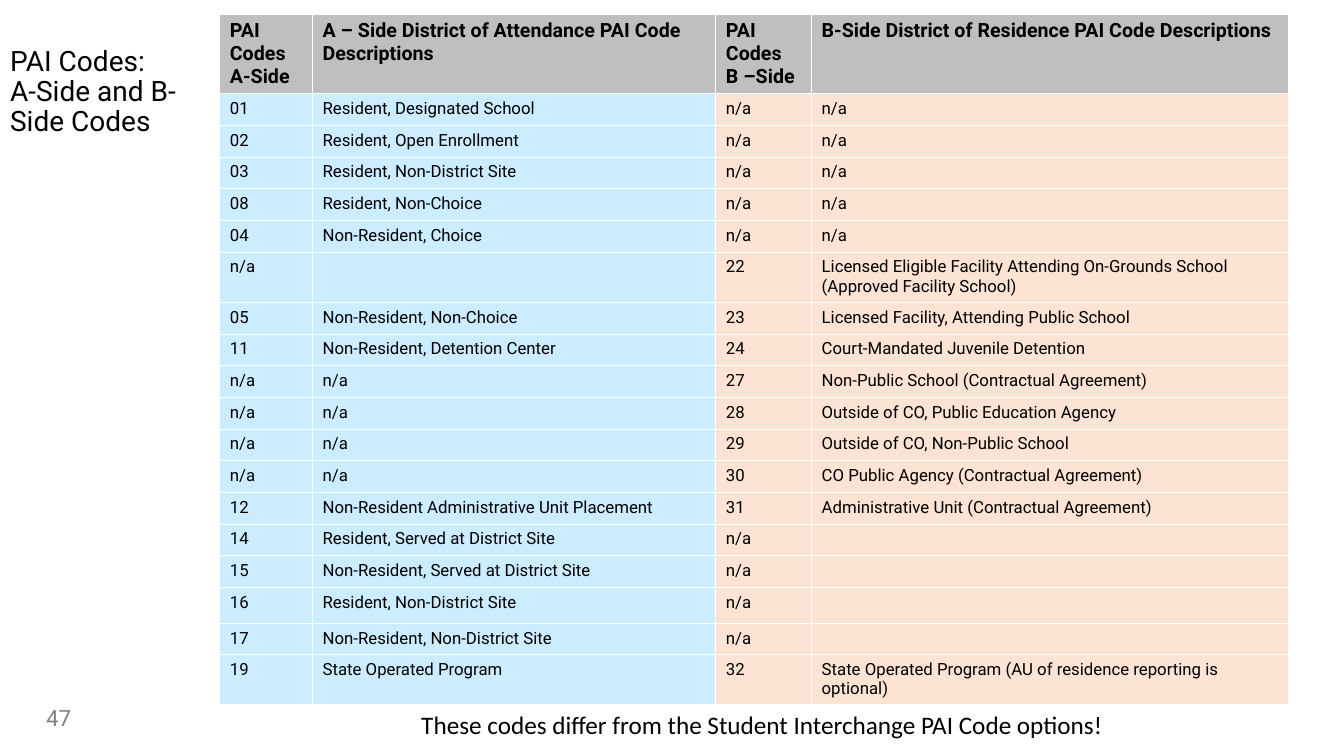
"""Build the slide comparing A-side and B-side PAI codes."""
from copy import deepcopy

from lxml import etree
from pptx import Presentation
from pptx.dml.color import RGBColor
from pptx.enum.text import MSO_ANCHOR, MSO_AUTO_SIZE, PP_ALIGN
from pptx.oxml.ns import qn
from pptx.util import Inches, Pt

LEFT = PP_ALIGN.LEFT
TOP, MIDDLE = MSO_ANCHOR.TOP, MSO_ANCHOR.MIDDLE
NO_FIT = MSO_AUTO_SIZE.NONE
COLORS = {"text": "000000", "number": "808080", "header": "BFBFBF",
          "a_side": "CCECFF", "b_side": "FCE3D3"}


def write(tf, *paragraphs, size=12, font="Roboto", color="text", bold=False,
          anchor=TOP, spacing=None):
    """Fill a text frame with one paragraph per string."""
    tf.word_wrap = True
    tf.vertical_anchor = anchor
    for i, text in enumerate(paragraphs):
        p = tf.add_paragraph() if i else tf.paragraphs[0]
        p.text = text
        p.alignment = LEFT
        p.line_spacing = spacing
        for r in p.runs:
            r.font.size = Pt(size)
            r.font.name = font
            r.font.bold = bold
            r.font.color.rgb = RGBColor.from_string(COLORS[color])
        for br in p._p.findall(qn("a:br")):
            br.append(deepcopy(p.runs[0]._r.rPr))
        etree.SubElement(p._p, qn("a:endParaRPr"), sz=str(size * 100))


prs = Presentation()
prs.slide_width, prs.slide_height = Inches(13.33), Inches(7.5)
slide = prs.slides.add_slide(prs.slide_layouts[5])

title = slide.shapes.title
title.left, title.top = Inches(0), Inches(0.14)
title.width, title.height = Inches(2.34), Inches(1.55)
write(title.text_frame, "PAI Codes: \nA-Side and B-Side Codes", size=20,
      anchor=MIDDLE, spacing=0.9)
title.text_frame.auto_size = NO_FIT

headers = [
    ["PAI Codes A-Side"],
    ["A – Side District of Attendance PAI Code Descriptions"],
    ["PAI Codes", "B –Side"],
    ["B-Side District of Residence PAI Code Descriptions"],
]
codes = [
    ("01", "Resident, Designated School", "n/a", "n/a"),
    ("02", "Resident, Open Enrollment", "n/a", "n/a"),
    ("03", "Resident, Non-District Site", "n/a", "n/a"),
    ("08", "Resident, Non-Choice", "n/a", "n/a"),
    ("04", "Non-Resident, Choice", "n/a", "n/a"),
    ("n/a", "", "22", "Licensed Eligible Facility Attending On-Grounds School "
                      "(Approved Facility School)"),
    ("05", "Non-Resident, Non-Choice", "23", "Licensed Facility, Attending Public School"),
    ("11", "Non-Resident, Detention Center", "24", "Court-Mandated Juvenile Detention"),
    ("n/a", "n/a", "27", "Non-Public School (Contractual Agreement)"),
    ("n/a", "n/a", "28", "Outside of CO, Public Education Agency"),
    ("n/a", "n/a", "29", "Outside of CO, Non-Public School"),
    ("n/a", "n/a", "30", "CO Public Agency (Contractual Agreement)"),
    ("12", "Non-Resident Administrative Unit Placement", "31",
     "Administrative Unit (Contractual Agreement)"),
    ("14", "Resident, Served at District Site", "n/a", ""),
    ("15", "Non-Resident, Served at District Site", "n/a", ""),
    ("16", "Resident, Non-District Site", "n/a", ""),
    ("17", "Non-Resident, Non-District Site", "n/a", ""),
    ("19", "State Operated Program", "32",
     "State Operated Program (AU of residence reporting is optional)"),
]
col_widths = [0.92, 4, 0.95, 4.73]
row_height = 4.4 / 14
special_heights = {0: 0.78, 6: 0.5, 16: 0.36, 17: 0.3, 18: 0.5}

table = slide.shapes.add_table(len(codes) + 1, len(headers), Inches(2.18), Inches(0.14),
                               Inches(10.6), Inches(6.84)).table
for col, width in zip(table.columns, col_widths):
    col.width = Inches(width)
for i, row in enumerate(table.rows):
    row.height = Inches(special_heights.get(i, row_height))
    for j, cell in enumerate(row.cells):
        if i == 0:
            fill = "header"
            write(cell.text_frame, *headers[j], size=14, bold=True)
        else:
            fill = "a_side" if j < 2 else "b_side"
            write(cell.text_frame, codes[i - 1][j])
        cell.fill.solid()
        cell.fill.fore_color.rgb = RGBColor.from_string(COLORS[fill])

number = slide.shapes.add_textbox(Inches(0.36), Inches(6.88), Inches(0.55), Inches(0.47))
write(number.text_frame, "47", size=16, color="number", anchor=MIDDLE)

note = slide.shapes.add_textbox(Inches(4.08), Inches(6.99), Inches(8.37), Inches(0.4))
write(note.text_frame, "These codes differ from the Student Interchange PAI Code options!",
      size=18, font="Calibri")

prs.save("out.pptx")
